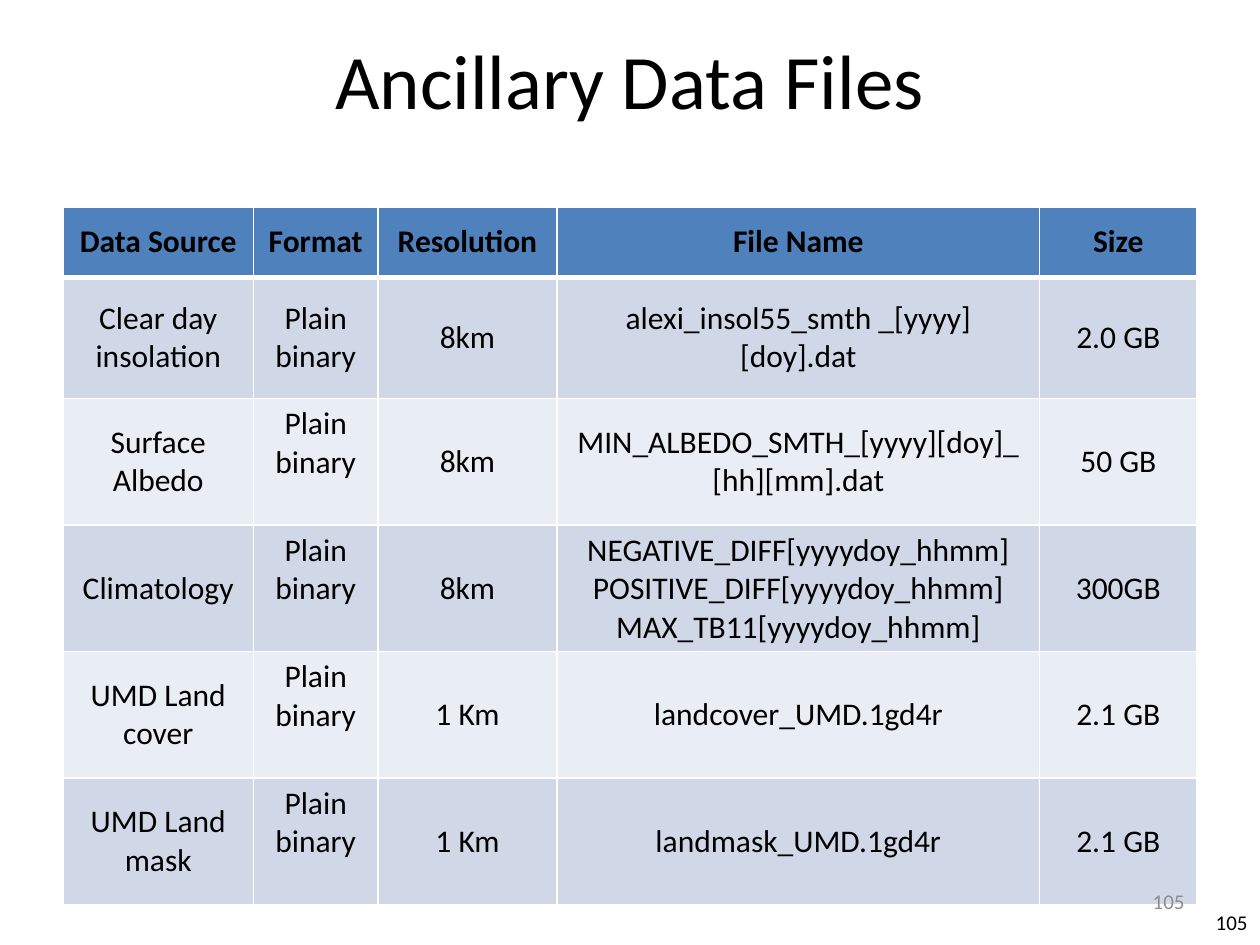
from lxml import etree
from pptx import Presentation
from pptx.dml.color import RGBColor
from pptx.enum.text import MSO_ANCHOR, PP_ALIGN
from pptx.oxml.ns import qn
from pptx.util import Cm, Pt

BLACK = RGBColor(0x00, 0x00, 0x00)
WHITE = RGBColor(0xFF, 0xFF, 0xFF)
GRAY = RGBColor(0x8C, 0x8C, 0x8C)
HEADER_BLUE = RGBColor(0x4F, 0x81, 0xBD)
BANDS = (RGBColor(0xD0, 0xD8, 0xE8), RGBColor(0xE9, 0xED, 0xF4))

MIDDLE = MSO_ANCHOR.MIDDLE
CENTER, RIGHT = PP_ALIGN.CENTER, PP_ALIGN.RIGHT

FORMAT_COLUMN = 1
COLUMN_WIDTHS = (3.84, 2.51, 3.61, 9.73, 3.17)
HEADER_HEIGHT, ROW_HEIGHT = 1.42, 2.44
ROWS = (
    ("Data Source", "Format", "Resolution", "File Name", "Size"),
    ("Clear day insolation", "Plain binary", "8km",
     "alexi_insol55_smth _[yyyy][doy].dat", "2.0 GB"),
    ("Surface Albedo", "Plain binary", "8km",
     "MIN_ALBEDO_SMTH_[yyyy][doy]_\n[hh][mm].dat", "50 GB"),
    ("Climatology", "Plain binary", "8km",
     "NEGATIVE_DIFF[yyyydoy_hhmm]\nPOSITIVE_DIFF[yyyydoy_hhmm]\n"
     "MAX_TB11[yyyydoy_hhmm]", "300GB"),
    ("UMD Land cover", "Plain binary", "1 Km", "landcover_UMD.1gd4r", "2.1 GB"),
    ("UMD Land mask", "Plain binary", "1 Km", "landmask_UMD.1gd4r", "2.1 GB"),
)


def write_text(text_frame, text, size=18, color=BLACK, bold=False, align=CENTER):
    """Fill a text frame, one paragraph for each line of text."""
    text_frame.word_wrap = True
    text_frame.text = text
    for paragraph in text_frame.paragraphs:
        paragraph.alignment = align
        paragraph.font.name = "Calibri"
        for run in paragraph.runs:
            run.font.name = "Calibri"
            run.font.size = Pt(size)
            run.font.bold = bold
            run.font.color.rgb = color


def add_text_box(slide, left, top, width, height, text, **text_format):
    box = slide.shapes.add_textbox(Cm(left), Cm(top), Cm(width), Cm(height))
    box.text_frame.vertical_anchor = MIDDLE
    write_text(box.text_frame, text, **text_format)


def set_borders(cell, **widths):
    """Draw white borders; widths in points are keyed L, R, T, B."""
    properties = cell._tc.get_or_add_tcPr()
    for position, (side, width) in enumerate(widths.items()):
        line = etree.Element(qn(f"a:ln{side}"), w=str(Pt(width)))
        fill = etree.SubElement(line, qn("a:solidFill"))
        etree.SubElement(fill, qn("a:srgbClr"), val=str(WHITE))
        properties.insert(position, line)


def add_file_table(slide, left, top):
    height = HEADER_HEIGHT + ROW_HEIGHT * (len(ROWS) - 1)
    table = slide.shapes.add_table(
        len(ROWS), len(COLUMN_WIDTHS), Cm(left), Cm(top),
        Cm(sum(COLUMN_WIDTHS)), Cm(height)).table
    for column, width in zip(table.columns, COLUMN_WIDTHS):
        column.width = Cm(width)

    for row_index, texts in enumerate(ROWS):
        is_header = row_index == 0
        table.rows[row_index].height = Cm(HEADER_HEIGHT if is_header else ROW_HEIGHT)
        for column_index, text in enumerate(texts):
            cell = table.cell(row_index, column_index)
            cell.vertical_anchor = MIDDLE
            cell.fill.solid()
            cell.fill.fore_color.rgb = (
                HEADER_BLUE if is_header else BANDS[(row_index - 1) % 2])
            write_text(cell.text_frame, text, bold=is_header)
            set_borders(cell, L=1, R=1, T=3 if row_index == 1 else 1,
                        B=3 if is_header else 1)
            # The format sits one line higher below the first data row
            if row_index > 1 and column_index == FORMAT_COLUMN:
                cell.margin_bottom = Cm(0.9)


def build_slide(presentation):
    slide = presentation.slides.add_slide(presentation.slide_layouts[6])
    # Outer page number
    add_text_box(slide, 23.5, 18.08, 1.9, 1.02, "105", size=12, align=RIGHT)
    # Title
    add_text_box(slide, 1.27, 0, 22.86, 3.18, "Ancillary Data Files", size=44)
    # Data files
    add_file_table(slide, 1.27, 4.17)
    # Inner page number
    add_text_box(slide, 18.21, 17.65, 5.92, 1.02, "105",
                 size=12, color=GRAY, align=RIGHT)


def main():
    presentation = Presentation()
    presentation.slide_width = Cm(25.4)
    presentation.slide_height = Cm(19.05)
    build_slide(presentation)
    presentation.save("out.pptx")


if __name__ == "__main__":
    main()
